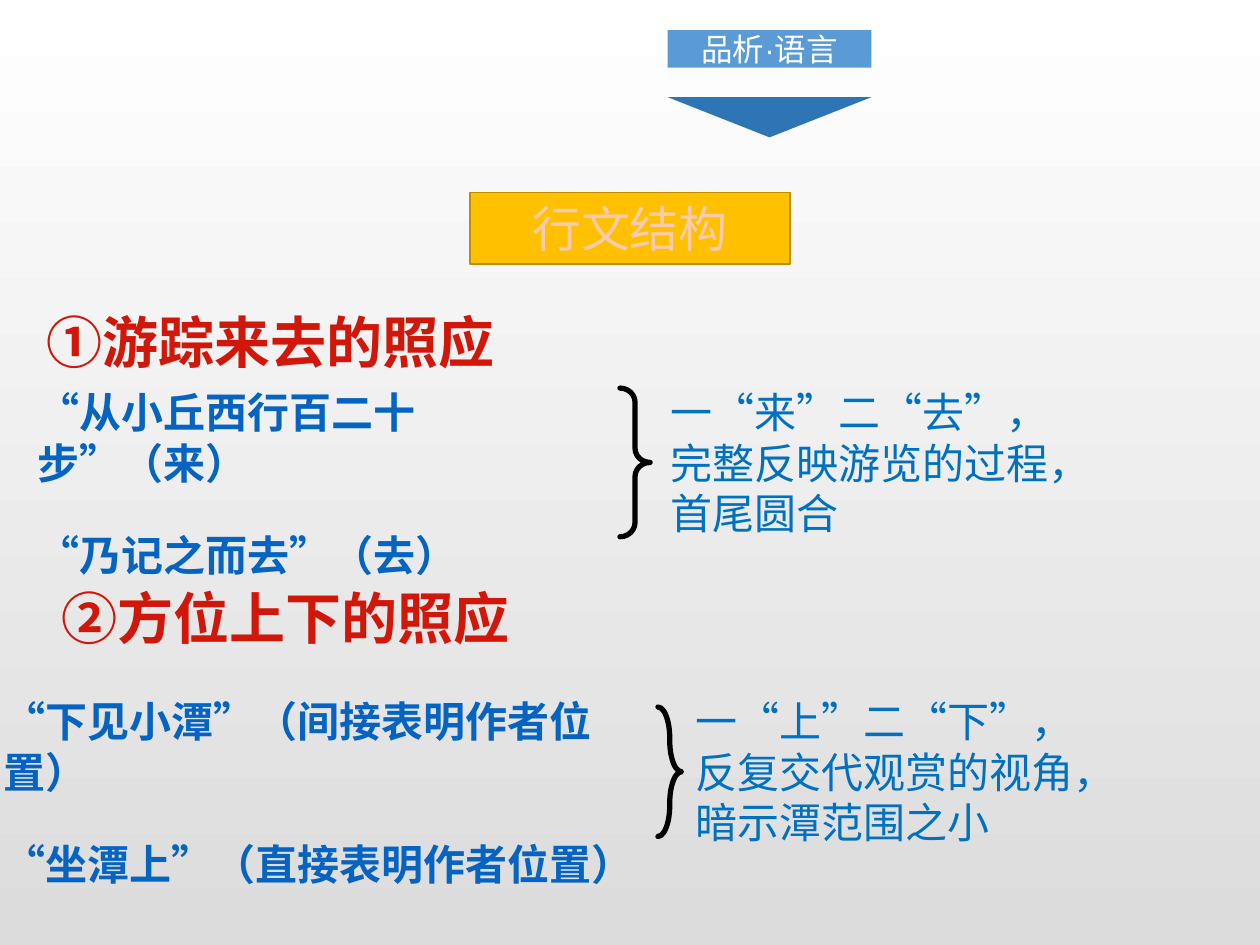
from lxml.etree import SubElement
from pptx import Presentation
from pptx.dml.color import RGBColor
from pptx.enum.lang import MSO_LANGUAGE_ID
from pptx.enum.shapes import MSO_SHAPE
from pptx.enum.text import MSO_ANCHOR, PP_ALIGN
from pptx.oxml.ns import qn
from pptx.util import Pt

WHITE = RGBColor(0xFF, 0xFF, 0xFF)
GRAY = RGBColor(0xDC, 0xDC, 0xDC)
BLACK = RGBColor(0, 0, 0)
RED = RGBColor(0xD1, 0x17, 0x09)
NAVY = RGBColor(0x05, 0x63, 0xC1)
BLUE = RGBColor(0x00, 0x70, 0xC0)
SKY = RGBColor(0x5B, 0x9B, 0xD5)
DEEP = RGBColor(0x2E, 0x75, 0xB6)
GOLD = RGBColor(0xFF, 0xC0, 0x00)
OCHRE = RGBColor(0xBD, 0x8E, 0x00)
PEACH = RGBColor(0xF8, 0xCB, 0xAD)

CJK = "Noto Sans CJK SC"
FORMS = {
    "head": ({"size": Pt(32), "name": "Arial", "bold": True}, RED),
    "quote": ({"size": Pt(24), "name": "Arial", "bold": True}, NAVY),
    "note": ({"size": Pt(24), "name": CJK}, BLUE),
    "title": ({"size": Pt(28), "name": CJK}, PEACH),
    "tag": ({"size": Pt(18), "name": "Arial"}, WHITE),
}
GAP = 24

TEXTS = [
    ("head", (19.5, 172, 302.5, 46), ["①游踪来去的照应"]),
    ("quote", (14.5, 217.5, 340.5, 89.5), ["“从小丘西行百二十步”（来）", "“乃记之而去”（去）"]),
    ("note", (376, 217.5, 240, 94.5), ["一“来”二“去”，完整反映游览的过程，首尾圆合"]),
    ("head", (28, 330, 442, 46), ["②方位上下的照应"]),
    ("quote", (-5, 394, 391, 89.5), ["“下见小潭”（间接表明作者位置）", "“坐潭上”（直接表明作者位置）"]),
    ("note", (390.25, 394, 231, 94.5), ["一“上”二“下”，反复交代观赏的视角，暗示潭范围之小"]),
]
BRACES = [
    ((354.25, 221.75, 17.25, 85), 0.47),
    ((376, 404, 13.5, 74), 1.32),
]
TITLE = ("行文结构", (268.5, 110, 183, 41))
TAG = ("品析·语言", (381.5, 17.25, 116.5, 21.5))
ARROW = (381.5, 55.5, 116.5, 23)


def points(box):
    return [Pt(n) for n in box]


def write(frame, form, lines, align=PP_ALIGN.LEFT):
    values, color = FORMS[form]
    frame.word_wrap = True
    for i, line in enumerate(lines):
        para = frame.add_paragraph() if i else frame.paragraphs[0]
        para.alignment = align
        if i:
            para.space_before = Pt(GAP)
        run = para.add_run()
        run.text = line
        for key, value in values.items():
            setattr(run.font, key, value)
        run.font.language_id = MSO_LANGUAGE_ID.SIMPLIFIED_CHINESE
        run.font.color.rgb = color
        SubElement(run.font._element, qn("a:ea")).set("typeface", CJK)


def draw(shapes, kind, box, fill=None, line=None, width=1):
    shape = shapes.add_shape(kind, *points(box))
    shape.shadow.inherit = False
    for part, color in ((shape.fill, fill), (shape.line.fill, line)):
        if color is None:
            part.background()
        else:
            part.solid()
            part.fore_color.rgb = color
    if line is not None:
        shape.line.width = Pt(width)
    return shape


def label(shape, form, text, inset):
    frame = shape.text_frame
    frame.vertical_anchor = MSO_ANCHOR.MIDDLE
    for side in ("left", "top", "right", "bottom"):
        setattr(frame, "margin_" + side, Pt(inset))
    write(frame, form, [text], PP_ALIGN.CENTER)


deck = Presentation()
deck.slide_width, deck.slide_height = Pt(720), Pt(540)
slide = deck.slides.add_slide(deck.slide_layouts[6])
shapes = slide.shapes

back = slide.background.fill
back.gradient()
back.gradient_angle = 270
for stop, color in zip(back.gradient_stops, (WHITE, GRAY)):
    stop.color.rgb = color

for form, box, lines in TEXTS:
    write(shapes.add_textbox(*points(box)).text_frame, form, lines)

for box, curve in BRACES:
    brace = draw(shapes, MSO_SHAPE.RIGHT_BRACE, box, line=BLACK, width=3)
    brace.adjustments[0] = curve
    brace.get_or_add_ln().set("cap", "rnd")

text, box = TITLE
label(draw(shapes, MSO_SHAPE.RECTANGLE, box, GOLD, OCHRE), "title", text, 3.6)

group = shapes.add_group_shape().shapes
text, box = TAG
label(draw(group, MSO_SHAPE.RECTANGLE, box, SKY), "tag", text, 0)
draw(group, MSO_SHAPE.ISOSCELES_TRIANGLE, ARROW, DEEP).rotation = 180

deck.save("out.pptx")
